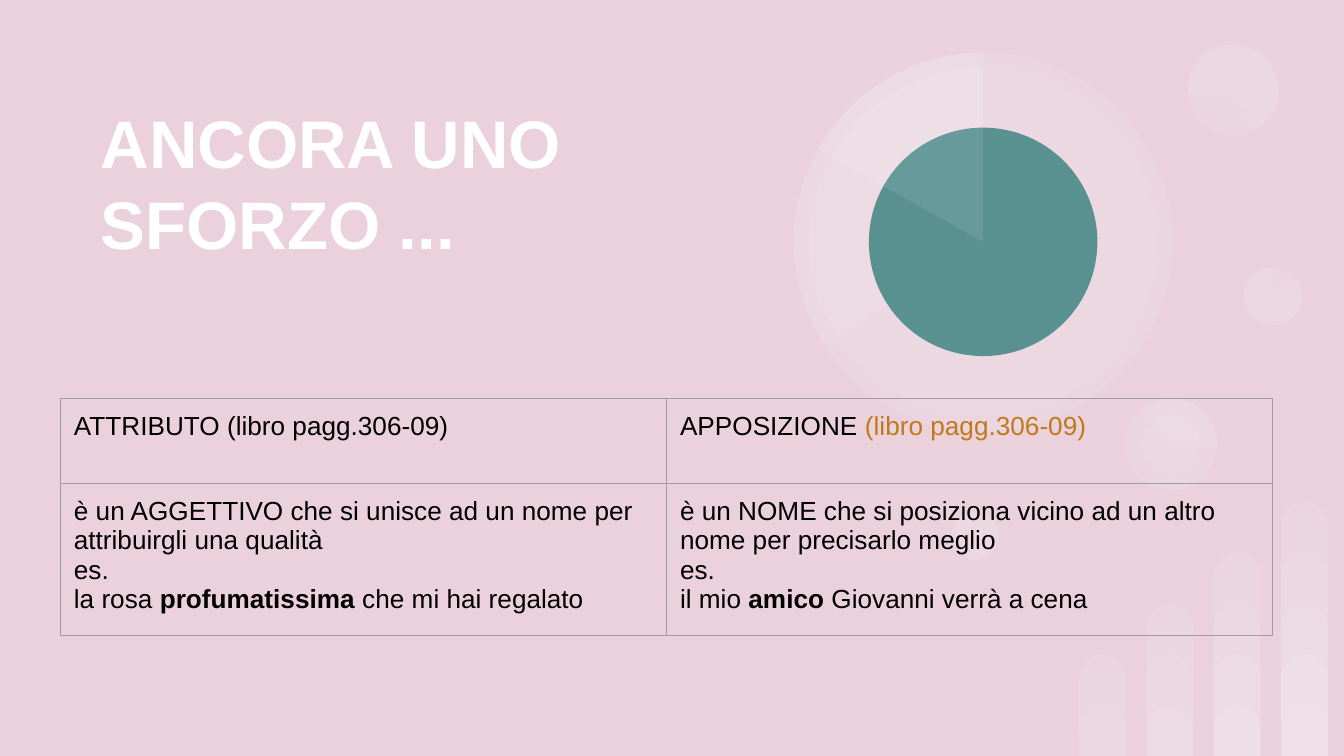
import pptx
import pptx.dml.color
import pptx.enum.shapes
import pptx.enum.text
import pptx.oxml
import pptx.oxml.ns
import pptx.util

EMU_PER_PX = 4572  # 200 px to the inch
PAGE_WIDTH, PAGE_HEIGHT = 2000, 1125
MARGIN = 20
FONT = "Arial"
WHITE, BLACK, PINK = "FFFFFF", "000000", "EAD1DC"
TEAL, OCHRE, GREY = "599191", "C0791B", "9E9E9E"
VEIL = 9  # opacity of the pale decorations, in percent
CELL_SIZE = 14
SHAPES = pptx.enum.shapes.MSO_SHAPE

# left, top, size, rotation, pie angles (None for a full disc), colour, opacity
DISCS = [
    (1851, 398, 86, 0, None, WHITE, VEIL),
    (1416, 762, 70, 196.2, None, WHITE, VEIL),
    (1673, 592, 138, 90, None, WHITE, VEIL),
    (1673, 592, 138, 90, (137.41, 270.77), WHITE, VEIL),
    (1700, 618, 86, 90, None, WHITE, VEIL),
    (1851, 398, 86, 0, (322.95, 270), WHITE, VEIL),
    (1767, 66, 136, 215.9, None, WHITE, VEIL),
    (1767, 66, 136, 215.9, (322.95, 205.23), WHITE, VEIL),
    (1181, 78, 564, 0, None, WHITE, VEIL),
    (1204, 101, 518, 34.1, None, WHITE, VEIL),
    (1181, 78, 564, 0, (146.69, 270), WHITE, VEIL),
    (1293, 190, 340, 34.1, None, TEAL, 100),
    (1181, 78, 564, 0, (209.24, 270), WHITE, VEIL),
    (1416, 762, 70, 196.2, (322.95, 270), WHITE, VEIL),
]

# Each cell is a list of paragraphs, each paragraph a list of (text, colour, bold)
CELLS = [
    [
        [[("ATTRIBUTO (libro pagg.306-09)", BLACK, False)]],
        [[("APPOSIZIONE ", BLACK, False), ("(libro pagg.306-09)", OCHRE, False)]],
    ],
    [
        [
            [("è un AGGETTIVO che si unisce ad un nome per attribuirgli una qualità",
              BLACK, False)],
            [("es.", BLACK, False)],
            [("la rosa ", BLACK, False), ("profumatissima", BLACK, True),
             (" che mi hai regalato", BLACK, False)],
        ],
        [
            [("è un NOME che si posiziona vicino ad un altro nome per precisarlo meglio",
              BLACK, False)],
            [("es.", BLACK, False)],
            [("il mio ", BLACK, False), ("amico", BLACK, True),
             (" Giovanni verrà a cena", BLACK, False)],
        ],
    ],
]


def px(length):
    return pptx.util.Emu(length * EMU_PER_PX)


def rgb(colour):
    return pptx.dml.color.RGBColor.from_string(colour)


def add_shape(page, kind, left, top, width, height, colour, opacity, adjustments=()):
    """Add a preset shape without outline or shadow."""
    shape = page.shapes.add_shape(kind, px(left), px(top), px(width), px(height))
    shape.shadow.inherit = False
    shape.line.fill.background()
    shape.fill.solid()
    shape.fill.fore_color.rgb = rgb(colour)
    if opacity < 100:
        tint = shape.fill._xPr.find(".//" + pptx.oxml.ns.qn("a:srgbClr"))
        tint.append(pptx.oxml.parse_xml(
            f'<a:alpha {pptx.oxml.ns.nsdecls("a")} val="{opacity * 1000}"/>'))
    for index, value in enumerate(adjustments):
        shape.adjustments[index] = value
    return shape


def add_bars(page):
    """Add four columns of overlapping bars, one level taller each time."""
    for column in range(4):
        for level in range(column + 2):
            height = 75 + 76 * level
            add_shape(page, SHAPES.ROUND_2_SAME_RECTANGLE, 1606 + 100 * column,
                      PAGE_HEIGHT - height, 70, height, WHITE, VEIL, (0.5, 0))


def add_disc(page, left, top, size, rotation, angles, colour, opacity):
    kind = SHAPES.PIE if angles else SHAPES.OVAL
    # Angles are stored in 60000ths of a degree, adjustments in 100000ths
    adjustments = [angle * 0.6 for angle in angles or ()]
    disc = add_shape(page, kind, left, top, size, size, colour, opacity, adjustments)
    disc.rotation = rotation


def add_span(para, text, size, colour, bold):
    span = para.add_run()
    span.text = text
    span.font.name = FONT
    span.font.size = pptx.util.Pt(size)
    span.font.bold = bold
    span.font.color.rgb = rgb(colour)


def set_margins(holder):
    holder.margin_left = holder.margin_right = px(MARGIN)
    holder.margin_top = holder.margin_bottom = px(MARGIN)


def add_title(page):
    box = page.shapes.add_textbox(px(130), px(66), px(930), px(410))
    frame = box.text_frame
    frame.word_wrap = True
    frame.vertical_anchor = pptx.enum.text.MSO_ANCHOR.MIDDLE
    set_margins(frame)
    add_span(frame.paragraphs[0], "ANCORA UNO SFORZO ...", 36, WHITE, True)


def set_borders(cell):
    properties = cell._tc.get_or_add_tcPr()
    for index, side in enumerate("LRTB"):
        properties.insert(index, pptx.oxml.parse_xml(
            f'<a:ln{side} {pptx.oxml.ns.nsdecls("a")} w="{pptx.util.Pt(0.75)}">'
            f'<a:solidFill><a:srgbClr val="{GREY}"/></a:solidFill></a:ln{side}>'))


def set_end_size(para, size):
    """Give the paragraph mark the text size, so that it does not stretch the row."""
    para._p.append(pptx.oxml.parse_xml(
        f'<a:endParaRPr {pptx.oxml.ns.nsdecls("a")} sz="{size * 100}"/>'))


def fill_cell(cell, paragraphs):
    set_margins(cell)
    set_borders(cell)
    cell.fill.background()
    frame = cell.text_frame
    for index, spans in enumerate(paragraphs):
        para = frame.add_paragraph() if index else frame.paragraphs[0]
        for text, colour, bold in spans:
            add_span(para, text, CELL_SIZE, colour, bold)
        set_end_size(para, CELL_SIZE)


def add_comparison(page):
    row_heights = (126, 215)
    table = page.shapes.add_table(len(CELLS), 2, px(90), px(593), px(1804),
                                  px(sum(row_heights))).table
    table.first_row = table.horz_banding = False
    for row, height in zip(table.rows, row_heights):
        row.height = px(height)
    for row_index, row in enumerate(CELLS):
        for column_index, paragraphs in enumerate(row):
            fill_cell(table.cell(row_index, column_index), paragraphs)


def main():
    deck = pptx.Presentation()
    deck.slide_width, deck.slide_height = px(PAGE_WIDTH), px(PAGE_HEIGHT)
    page = deck.slides.add_slide(deck.slide_layouts[6])
    page.background.fill.solid()
    page.background.fill.fore_color.rgb = rgb(PINK)
    add_bars(page)
    for disc in DISCS:
        add_disc(page, *disc)
    add_title(page)
    add_comparison(page)
    deck.save("out.pptx")


if __name__ == "__main__":
    main()
